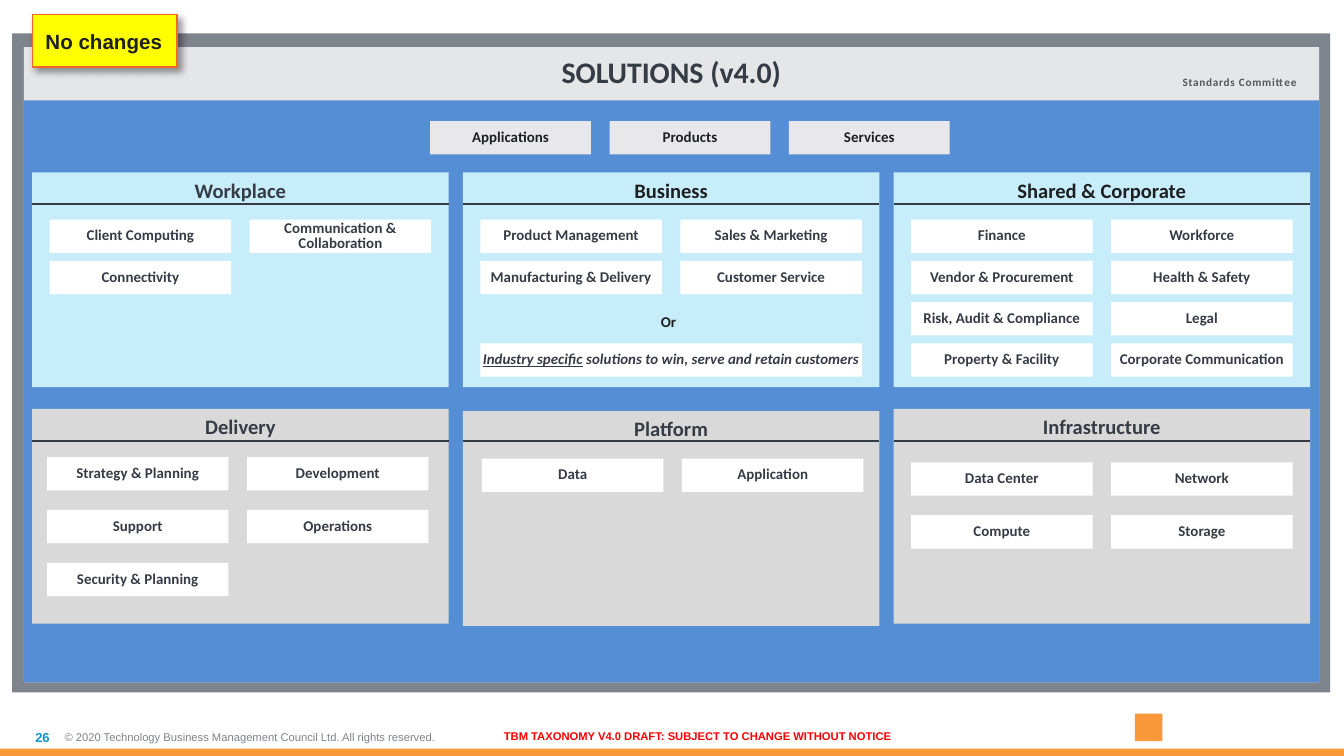
from dataclasses import dataclass
from typing import NamedTuple

import lxml.etree
import pptx
import pptx.dml.color
import pptx.enum.shapes
import pptx.enum.text
import pptx.oxml
import pptx.oxml.ns
import pptx.util

Cm = pptx.util.Cm
Align = pptx.enum.text.PP_ALIGN
Anchor = pptx.enum.text.MSO_ANCHOR
qn = pptx.oxml.ns.qn


@dataclass(frozen=True)
class Theme:
    heading_font: str = "Calibri"
    note_font: str = "Arial"
    slate: str = "353C45"
    ink: str = "1E1F21"
    muted: str = "53565C"
    frame: str = "7E848B"
    header: str = "E5E6E8"
    body: str = "558ED5"
    upper_panel: str = "C7EDFB"
    lower_panel: str = "D9D9D9"
    category: str = "E8E8EA"
    white: str = "FFFFFF"
    sticker: str = "FFFF00"
    sticker_line: str = "F26724"
    orange: str = "F89838"
    page_number: str = "0D96C9"
    warning: str = "FF0000"
    title_size: float = 16
    panel_size: float = 11
    tile_size: float = 8
    number_size: float = 7
    note_size: float = 6


THEME = Theme()


class Box(NamedTuple):
    """A rectangle in centimetres."""
    left: float
    top: float
    width: float
    height: float


@dataclass(frozen=True)
class Panel:
    title: str
    column: int
    top: float
    rule_top: float
    fill: str
    rows: tuple[tuple[str, ...], ...]
    tile_top: float
    row_pitch: float
    tile_inset: float = 0.33
    title_color: str = THEME.slate

    @property
    def left(self) -> float:
        return PANEL_LEFT + self.column * PANEL_PITCH


PANEL_LEFT, PANEL_PITCH, PANEL_WIDTH, PANEL_HEIGHT = 0.61, 8.14, 7.87, 4.06
TILE_WIDTH, TILE_HEIGHT, TILE_PITCH = 3.43, 0.63, 3.78
UPPER = dict(top=3.26, rule_top=3.86, fill=THEME.upper_panel, tile_top=4.15, row_pitch=0.78)
LOWER = dict(rule_top=8.33, fill=THEME.lower_panel, row_pitch=1.0)

PANELS = (
    Panel("Workplace", 0, rows=(("Client Computing", "Communication & Collaboration"),
                                ("Connectivity",)), **UPPER),
    Panel("Business", 1, title_color=THEME.ink,
          rows=(("Product Management", "Sales & Marketing"),
                ("Manufacturing & Delivery", "Customer Service")), **UPPER),
    Panel("Shared & Corporate", 2, title_color=THEME.ink,
          rows=(("Finance", "Workforce"),
                ("Vendor & Procurement", "Health & Safety"),
                ("Risk, Audit & Compliance", "Legal"),
                ("Property & Facility", "Corporate Communication")), **UPPER),
    Panel("Delivery", 0, top=7.73, tile_top=8.64, tile_inset=0.28,
          rows=(("Strategy & Planning", "Development"),
                ("Support", "Operations"),
                ("Security & Planning",)), **LOWER),
    Panel("Platform", 1, top=7.77, tile_top=8.67, tile_inset=0.36,
          rows=(("Data", "Application"),), **LOWER),
    Panel("Infrastructure", 2, top=7.73, tile_top=8.74,
          rows=(("Data Center", "Network"), ("Compute", "Storage")), **LOWER),
)


def rgb(color: str) -> pptx.dml.color.RGBColor:
    return pptx.dml.color.RGBColor.from_string(color)


def write(shape, text: str, *, size: float = THEME.tile_size, color: str = THEME.slate,
          font: str = THEME.heading_font, bold: bool = True, italic: bool = False,
          align=Align.CENTER, anchor=Anchor.MIDDLE, inset: float = 0, wrap: bool = True,
          line_spacing: float | None = None, tracking: float = 0,
          underlined_lead: str = "") -> None:
    """Fill a shape with one paragraph, with an optional underlined opening."""
    frame = shape.text_frame
    frame.word_wrap = wrap
    frame.vertical_anchor = anchor
    frame.margin_left = frame.margin_right = Cm(inset)
    frame.margin_top = frame.margin_bottom = Cm(inset)
    paragraph = frame.paragraphs[0]
    paragraph.alignment = align
    if line_spacing:
        paragraph.line_spacing = line_spacing
    for part, underline in ((underlined_lead, True), (text, False)):
        if not part:
            continue
        run = paragraph.add_run()
        run.text = part
        run.font.name, run.font.size = font, pptx.util.Pt(size)
        run.font.bold, run.font.italic, run.font.underline = bold, italic, underline
        run.font.color.rgb = rgb(color)
        if tracking:
            run._r.get_or_add_rPr().set("spc", str(round(tracking * 100)))


def add_rectangle(slide, box: Box, fill: str):
    shape = slide.shapes.add_shape(pptx.enum.shapes.MSO_SHAPE.RECTANGLE, *map(Cm, box))
    shape.shadow.inherit = False
    shape.fill.solid()
    shape.fill.fore_color.rgb = rgb(fill)
    shape.line.fill.background()
    return shape


def add_label(slide, box: Box, text: str, **text_format) -> None:
    write(slide.shapes.add_textbox(*map(Cm, box)), text, **text_format)


def add_tile(slide, left: float, top: float, text: str, width: float = TILE_WIDTH,
             fill: str = THEME.white, **text_format) -> None:
    shape = add_rectangle(slide, Box(left, top, width, TILE_HEIGHT), fill)
    write(shape, text, line_spacing=0.85, **text_format)


def add_rule(slide, left: float, top: float, width: float) -> None:
    rule = slide.shapes.add_connector(pptx.enum.shapes.MSO_CONNECTOR.STRAIGHT,
                                      Cm(left), Cm(top), Cm(left + width), Cm(top))
    rule.line.color.rgb = rgb(THEME.slate)
    rule.line.width = pptx.util.Pt(1)
    lxml.etree.SubElement(rule._element.spPr, qn("a:effectLst"))


def add_panel(slide, panel: Panel) -> None:
    shape = add_rectangle(slide, Box(panel.left, panel.top, PANEL_WIDTH, PANEL_HEIGHT), panel.fill)
    write(shape, panel.title, size=THEME.panel_size, color=panel.title_color,
          anchor=Anchor.TOP, inset=0.1)
    add_rule(slide, panel.left, panel.rule_top, PANEL_WIDTH)
    for row, names in enumerate(panel.rows):
        for column, name in enumerate(names):
            add_tile(slide, panel.left + panel.tile_inset + column * TILE_PITCH,
                     panel.tile_top + row * panel.row_pitch, name)


def add_industry_option(slide, panel: Panel) -> None:
    add_label(slide, Box(12.04, 5.77, 1.19, 0.61), "Or", color=THEME.ink,
              anchor=Anchor.TOP, inset=0.13)
    add_tile(slide, panel.left + panel.tile_inset, panel.tile_top + 3 * panel.row_pitch,
             " solutions to win, serve and retain customers", width=TILE_PITCH + TILE_WIDTH,
             underlined_lead="Industry specific", italic=True)


def add_sticker(slide) -> None:
    sticker = add_rectangle(slide, Box(0.61, 0.28, 2.74, 0.99), THEME.sticker)
    sticker.line.color.rgb = rgb(THEME.sticker_line)
    sticker.line.width = pptx.util.Pt(0.75)
    effects = sticker._element.spPr.find(qn("a:effectLst"))
    shadow = lxml.etree.SubElement(
        effects, qn("a:outerShdw"), blurRad=str(pptx.util.Pt(4)), dist=str(pptx.util.Pt(3)),
        dir=str(45 * 60000), algn="tl", rotWithShape="0")
    color = lxml.etree.SubElement(shadow, qn("a:srgbClr"), val="000000")
    lxml.etree.SubElement(color, qn("a:alpha"), val="40000")
    write(sticker, "No changes", size=THEME.panel_size, color=THEME.ink, font=THEME.note_font,
          align=Align.LEFT, inset=0.25, wrap=False)


def add_footer(slide) -> None:
    note = dict(font=THEME.note_font, size=THEME.note_size)
    add_label(slide, Box(1.22, 13.56, 8.53, 0.74),
              "© 2020 Technology Business Management Council Ltd. All rights reserved.",
              color=THEME.frame, bold=False, align=Align.LEFT, **note)
    add_label(slide, Box(0, 13.56, 0.94, 0.74), "26", font=THEME.note_font,
              size=THEME.number_size, color=THEME.page_number, align=Align.RIGHT)
    add_label(slide, Box(9.47, 13.79, 7.42, 0.25),
              "TBM TAXONOMY V4.0 DRAFT: SUBJECT TO CHANGE WITHOUT NOTICE",
              color=THEME.warning, wrap=False, **note)
    add_rectangle(slide, Box(21.45, 13.49, 0.52, 0.52), THEME.orange)
    add_rectangle(slide, Box(0, 14.15, 25.4, 0.14), THEME.orange)


def main() -> None:
    presentation = pptx.Presentation()
    presentation.slide_width, presentation.slide_height = Cm(25.4), Cm(14.29)
    slide = presentation.slides.add_slide(presentation.slide_layouts[6])
    add_footer(slide)
    add_rectangle(slide, Box(0.23, 0.63, 24.91, 12.46), THEME.frame)
    header = add_rectangle(slide, Box(0.45, 0.89, 24.48, 12.01), THEME.header)
    write(header, "SOLUTIONS (v4.0)", size=THEME.title_size, anchor=Anchor.TOP, inset=0.13)
    add_rectangle(slide, Box(0.45, 1.9, 24.48, 11), THEME.body)
    add_label(slide, Box(22.35, 1.42, 2.21, 0.25), "Standards Committee", size=THEME.note_size,
              color=THEME.muted, align=Align.LEFT, anchor=Anchor.TOP, wrap=False, tracking=0.4)
    for index, name in enumerate(("Applications", "Products", "Services")):
        add_tile(slide, 8.13 + index * 3.39, 2.29, name, width=3.04, fill=THEME.category,
                 color=THEME.ink, inset=0.13, wrap=False)
    for panel in PANELS:
        add_panel(slide, panel)
    add_industry_option(slide, PANELS[1])
    add_sticker(slide)
    presentation.save("out.pptx")


if __name__ == "__main__":
    main()
